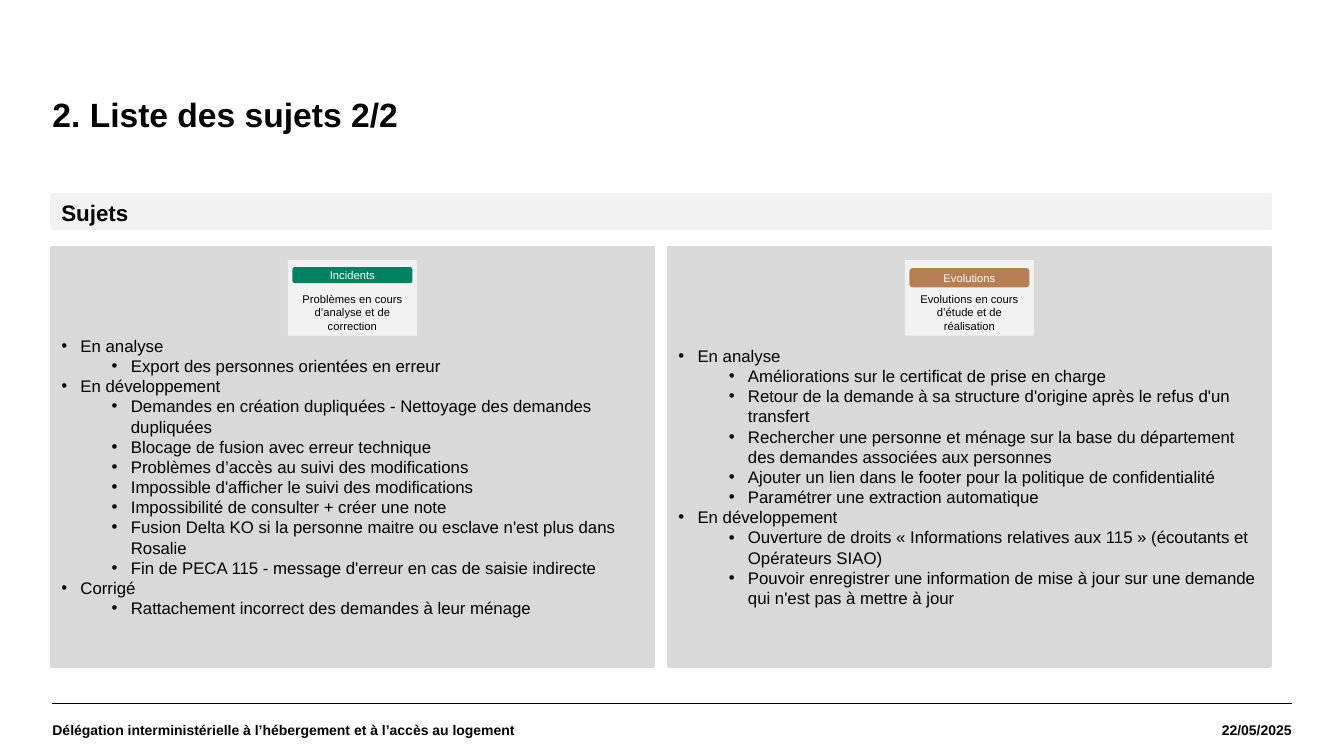
"""Build the slide listing the incidents and evolutions in progress."""
import pptx
import pptx.dml.color
import pptx.enum.shapes
import pptx.enum.text
import pptx.oxml.ns
import pptx.util
from lxml import etree

Inches, Pt = pptx.util.Inches, pptx.util.Pt
RGBColor = pptx.dml.color.RGBColor
MSO_SHAPE = pptx.enum.shapes.MSO_SHAPE
ANCHOR = pptx.enum.text.MSO_ANCHOR
ALIGN = pptx.enum.text.PP_ALIGN
qn = pptx.oxml.ns.qn

BLACK = RGBColor(0x00, 0x00, 0x00)
WHITE = RGBColor(0xFF, 0xFF, 0xFF)
LIGHT = RGBColor(0xF2, 0xF2, 0xF2)
GREY = RGBColor(0xD9, 0xD9, 0xD9)
GREEN = RGBColor(0x00, 0x82, 0x60)
BROWN = RGBColor(0xB6, 0x7E, 0x54)

LEFT, PANEL_W, GAP = 0.51, 5.97, 0.15
PANEL_TOP, PANEL_H = 2.45, 4.16
CARD_W, PILL_W = 1.28, 1.19
RULE_X, RULE_Y, RULE_END = 0.52, 6.98, 12.81
FOOT_H = 7.5 - RULE_Y
INDENT, LEVEL_STEP = 0.19, 0.5

PANELS = [
    ("Incidents", GREEN, 2.65, 0.16, "Problèmes en cours d’analyse et de correction", 0.88, [
        ("En analyse", ["Export des personnes orientées en erreur"]),
        ("En développement", [
            "Demandes en création dupliquées - Nettoyage des demandes dupliquées",
            "Blocage de fusion avec erreur technique",
            "Problèmes d’accès au suivi des modifications",
            "Impossible d'afficher le suivi des modifications",
            "Impossibilité de consulter + créer une note",
            "Fusion Delta KO si la personne maitre ou esclave n'est plus dans Rosalie",
            "Fin de PECA 115 - message d'erreur en cas de saisie indirecte"]),
        ("Corrigé", ["Rattachement incorrect des demandes à leur ménage"])]),
    ("Evolutions", BROWN, 2.66, 0.19, "Evolutions en cours d’étude et de réalisation", 0.98, [
        ("En analyse", [
            "Améliorations sur le certificat de prise en charge",
            "Retour de la demande à sa structure d'origine après le refus d'un transfert",
            "Rechercher une personne et ménage sur la base du département "
            "des demandes associées aux personnes",
            "Ajouter un lien dans le footer pour la politique de confidentialité",
            "Paramétrer une extraction automatique"]),
        ("En développement", [
            "Ouverture de droits « Informations relatives aux 115 » (écoutants et Opérateurs SIAO)",
            "Pouvoir enregistrer une information de mise à jour sur une demande "
            "qui n'est pas à mettre à jour"])]),
]


def add_box(x, y, w, h, fill=None, line=None, kind=MSO_SHAPE.RECTANGLE,
            anchor=ANCHOR.TOP, inset=True):
    """Add a filled shape, or a text box when no fill is given."""
    box = [Inches(v) for v in (x, y, w, h)]
    if fill is None:
        sp = s.shapes.add_textbox(*box)
    else:
        sp = s.shapes.add_shape(kind, *box)
        sp.shadow.inherit = False
        sp.fill.solid()
        sp.fill.fore_color.rgb = fill
        if line is None:
            sp.line.fill.background()
        else:
            sp.line.color.rgb = line
            sp.line.width = Pt(2)
    tf = sp.text_frame
    tf.word_wrap = True
    tf.vertical_anchor = anchor
    if not inset:
        tf.margin_left = tf.margin_right = tf.margin_top = tf.margin_bottom = 0
    return tf


def add_text(p, text, size, color=BLACK, bold=False, align=ALIGN.LEFT):
    """Add one formatted run to a paragraph."""
    p.alignment = align
    r = p.add_run()
    r.text = text
    r.font.name = "Arial"
    r.font.size = Pt(size)
    r.font.bold = bold
    r.font.color.rgb = color


prs = pptx.Presentation()
prs.slide_width, prs.slide_height = Inches(13.33), Inches(7.5)
s = prs.slides.add_slide(prs.slide_layouts[6])

rule = s.shapes.add_connector(pptx.enum.shapes.MSO_CONNECTOR.STRAIGHT, Inches(RULE_X),
                              Inches(RULE_Y), Inches(RULE_END), Inches(RULE_Y))
rule.line.color.rgb = BLACK
rule.line.width = Pt(0.8)
etree.SubElement(rule._element.spPr, qn("a:effectLst"))

tf = add_box(RULE_X, 0.98, RULE_END - RULE_X, 1.05, inset=False)
tf.paragraphs[0].line_spacing = 0.9
add_text(tf.paragraphs[0], "2. Liste des sujets 2/2", 24, bold=True)

tf = add_box(LEFT, 1.93, 2 * PANEL_W + GAP, 0.34, LIGHT, LIGHT)
add_text(tf.paragraphs[0], "Sujets", 16, bold=True)

for col, (name, color, pill_y, pill_h, caption, top, groups) in enumerate(PANELS):
    x = LEFT + col * (PANEL_W + GAP)
    card_x, pill_x = (x + (PANEL_W - w) / 2 for w in (CARD_W, PILL_W))

    tf = add_box(x, PANEL_TOP, PANEL_W, PANEL_H, GREY, GREY)
    tf.margin_top = Inches(top)
    items = [(level, text) for head, subs in groups
             for level, text in [(0, head)] + [(1, sub) for sub in subs]]
    for i, (level, text) in enumerate(items):
        p = tf.add_paragraph() if i else tf.paragraphs[0]
        p.level = level
        pPr = p._p.get_or_add_pPr()
        pPr.set("marL", str(Inches(INDENT + level * LEVEL_STEP)))
        pPr.set("indent", str(-Inches(INDENT)))
        etree.SubElement(pPr, qn("a:buFont")).set("typeface", "Arial")
        etree.SubElement(pPr, qn("a:buChar")).set("char", "•")
        add_text(p, text, 12)

    add_box(card_x, 2.58, CARD_W, 0.75, LIGHT)
    tf = add_box(pill_x, pill_y, PILL_W, pill_h, color,
                 kind=MSO_SHAPE.ROUNDED_RECTANGLE, anchor=ANCHOR.MIDDLE)
    add_text(tf.paragraphs[0], name, 8, WHITE, align=ALIGN.CENTER)
    tf = add_box(card_x, 2.85, CARD_W, 0.46)
    add_text(tf.paragraphs[0], caption, 8, align=ALIGN.CENTER)

for x, w, text, align in [
        (RULE_X, 8.61, "Délégation interministérielle à l’hébergement et à l’accès au logement",
         ALIGN.LEFT),
        (RULE_END - 1.71, 1.71, "22/05/2025", ALIGN.RIGHT)]:
    tf = add_box(x, RULE_Y, w, FOOT_H, anchor=ANCHOR.MIDDLE, inset=False)
    add_text(tf.paragraphs[0], text, 10, bold=True, align=align)

prs.save("out.pptx")
